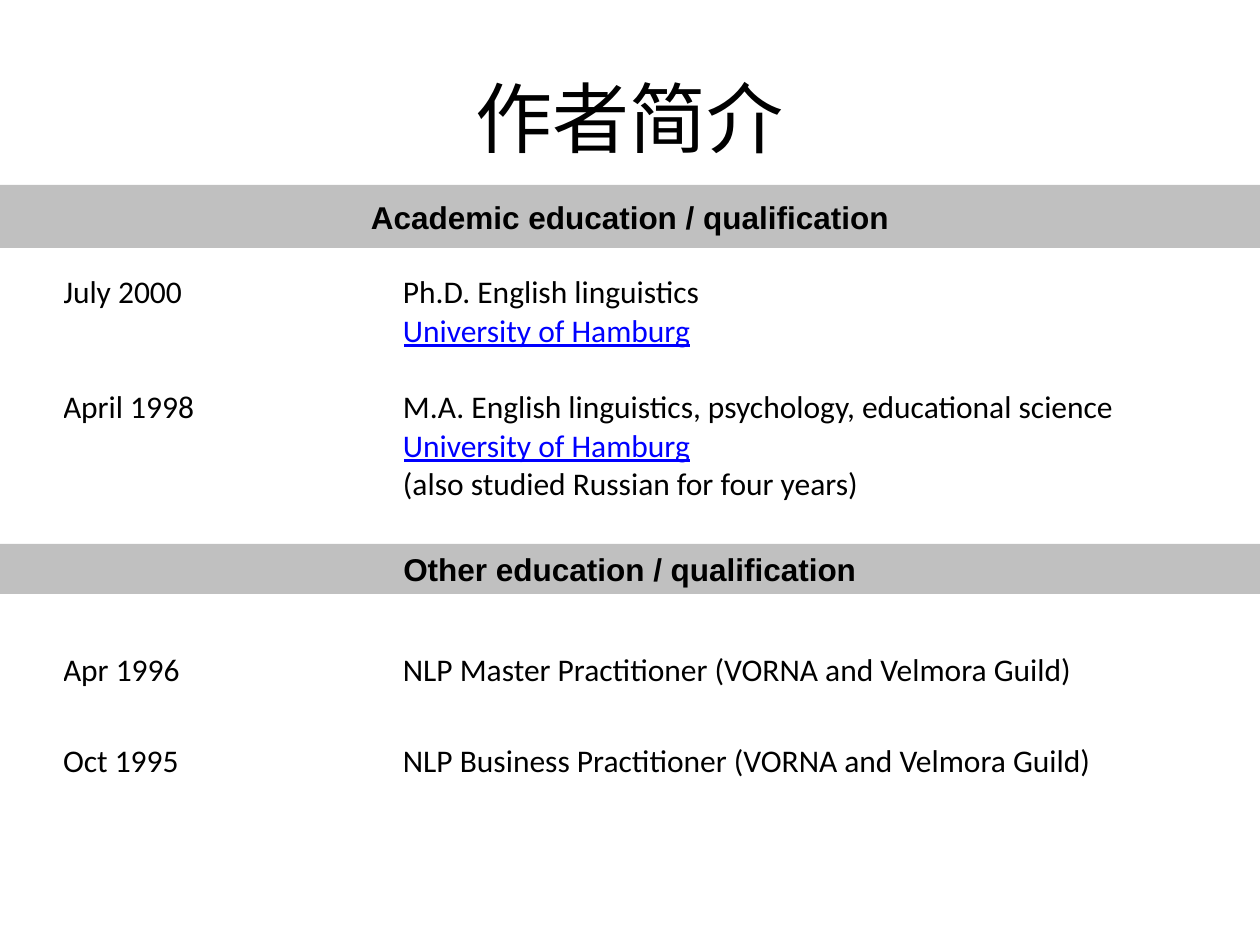
from dataclasses import dataclass

from pptx import Presentation
from pptx.dml.color import RGBColor
from pptx.enum.shapes import MSO_SHAPE
from pptx.enum.text import MSO_ANCHOR, PP_ALIGN
from pptx.util import Inches, Pt

SCALE = Inches(1) // 126
SLIDE_WIDTH, SLIDE_HEIGHT = 1260, 945
TABLE_LEFT = 63
COLUMN_WIDTHS = (340, 794)
ENTRY_GAP = 38


@dataclass(frozen=True)
class Theme:
    body_font: str = "Calibri"
    band_font: str = "Arial"
    title_size: int = 44
    text_size: int = 18
    ink: RGBColor = RGBColor(0x00, 0x00, 0x00)
    link: RGBColor = RGBColor(0x00, 0x00, 0xFF)
    band: RGBColor = RGBColor(0xC0, 0xC0, 0xC0)


THEME = Theme()
UNIVERSITY = "University of Hamburg"
CERTIFIERS = "(VORNA and Velmora Guild)"
ACADEMIC_ENTRIES = (
    ("July 2000", ("Ph.D. English linguistics", UNIVERSITY)),
    ("April 1998", ("M.A. English linguistics, psychology, educational science",
                    UNIVERSITY, "(also studied Russian for four years)")),
)
OTHER_ENTRIES = (
    ("Apr 1996", (f"NLP Master Practitioner {CERTIFIERS}",)),
    ("Oct 1995", (f"NLP Business Practitioner {CERTIFIERS}",)),
)


def px(length):
    return length * SCALE


def style_text(paragraph, font_name, size, color=THEME.ink, bold=False, underline=False):
    for run in paragraph.runs:
        font = run.font
        font.name = font_name
        font.size = Pt(size)
        font.color.rgb = color
        font.bold = bold
        font.underline = underline


def add_title(slide, text):
    title = slide.shapes.add_textbox(px(63), px(38), px(1134), px(158))
    frame = title.text_frame
    frame.word_wrap = True
    frame.vertical_anchor = MSO_ANCHOR.MIDDLE
    frame.text = text
    heading = frame.paragraphs[0]
    heading.alignment = PP_ALIGN.CENTER
    style_text(heading, THEME.body_font, THEME.title_size)


def add_band(slide, text, top, height):
    band = slide.shapes.add_shape(MSO_SHAPE.RECTANGLE, 0, px(top), px(SLIDE_WIDTH), px(height))
    band.shadow.inherit = False
    band.fill.solid()
    band.fill.fore_color.rgb = THEME.band
    band.line.fill.background()
    frame = band.text_frame
    frame.vertical_anchor = MSO_ANCHOR.MIDDLE
    frame.text = text
    heading = frame.paragraphs[0]
    heading.alignment = PP_ALIGN.CENTER
    style_text(heading, THEME.band_font, THEME.text_size, bold=True)


def fill_cell(cell, lines, gap_above):
    cell.fill.background()
    cell.margin_left = cell.margin_right = cell.margin_bottom = 0
    cell.margin_top = px(gap_above)
    cell.text_frame.text = "\n".join(lines)
    for line in cell.text_frame.paragraphs:
        is_link = line.text == UNIVERSITY
        color = THEME.link if is_link else THEME.ink
        style_text(line, THEME.body_font, THEME.text_size, color, underline=is_link)


def add_entries(slide, entries, top, row_heights):
    frame = slide.shapes.add_table(len(entries), len(COLUMN_WIDTHS), px(TABLE_LEFT), px(top),
                                   px(sum(COLUMN_WIDTHS)), px(sum(row_heights)))
    table = frame.table
    table.first_row = False
    table.horz_banding = False
    for column, width in zip(table.columns, COLUMN_WIDTHS):
        column.width = px(width)
    for index, (date, details) in enumerate(entries):
        table.rows[index].height = px(row_heights[index])
        gap_above = ENTRY_GAP if index else 0
        fill_cell(table.cell(index, 0), (date,), gap_above)
        fill_cell(table.cell(index, 1), details, gap_above)


def main():
    presentation = Presentation()
    presentation.slide_width = px(SLIDE_WIDTH)
    presentation.slide_height = px(SLIDE_HEIGHT)
    slide = presentation.slides.add_slide(presentation.slide_layouts[6])
    add_title(slide, "作者简介")
    add_entries(slide, ACADEMIC_ENTRIES, 274, (77, 150))
    add_band(slide, "Academic education / qualification", 185, 63)
    add_entries(slide, OTHER_ENTRIES, 652, (53, 106))
    add_band(slide, "Other education / qualification", 544, 50)
    presentation.save("out.pptx")


if __name__ == "__main__":
    main()
